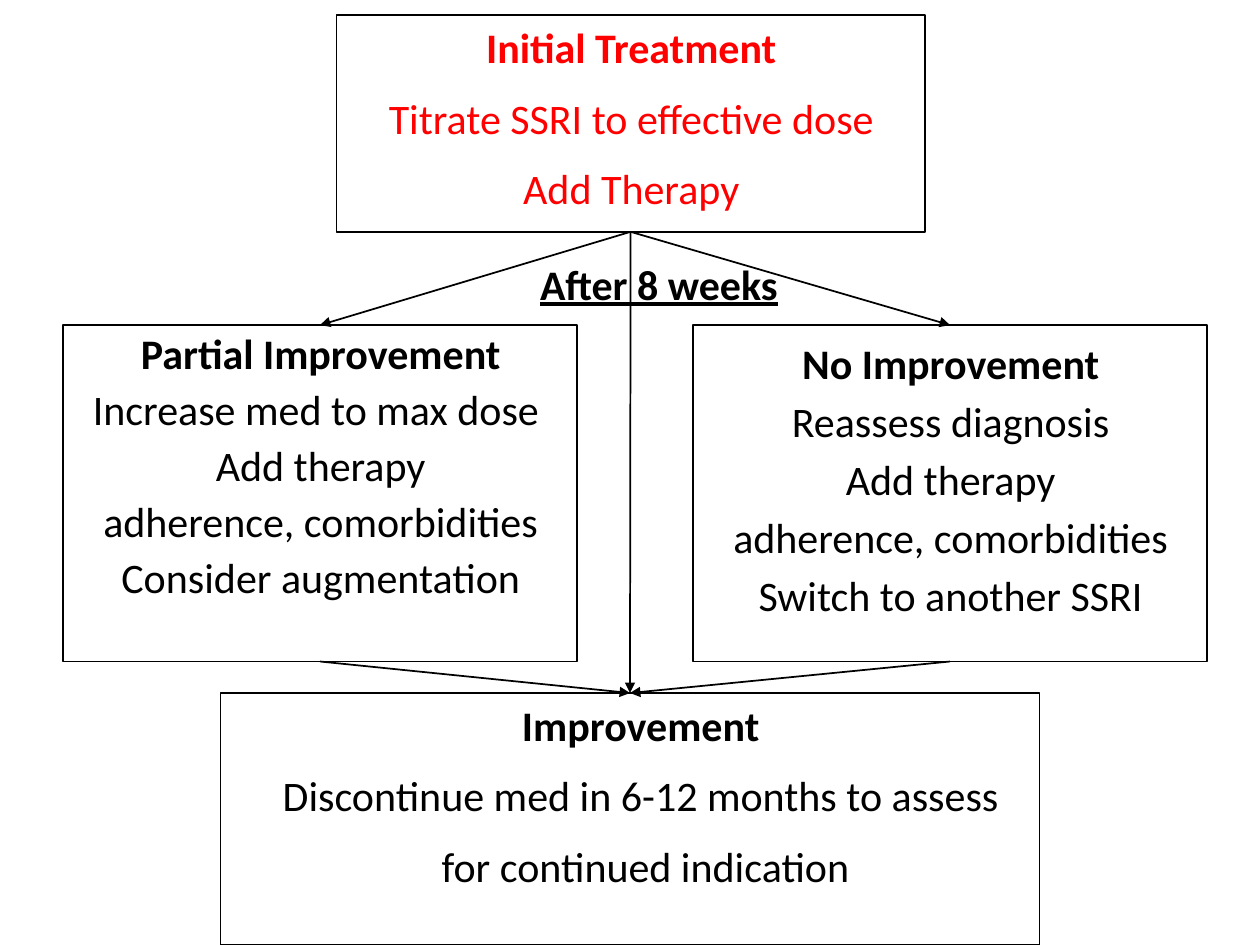
from dataclasses import dataclass
from lxml.etree import SubElement
from pptx import Presentation
from pptx.dml.color import RGBColor
from pptx.enum.shapes import MSO_CONNECTOR as Connector, MSO_SHAPE as Shape
from pptx.enum.text import MSO_ANCHOR as Anchor, PP_ALIGN as Align
from pptx.oxml.ns import qn
from pptx.util import Inches, Pt

TOP, BOTTOM = 0, 2


@dataclass(frozen=True)
class Theme:
    """Colours, type sizes and spacings of the slide."""
    ink: RGBColor = RGBColor(0, 0, 0)
    accent: RGBColor = RGBColor(255, 0, 0)
    font: str = "Calibri"
    size: Pt = Pt(24)
    line: Pt = Pt(1)
    wide_gap: Pt = Pt(11.6)
    medium_gap: Pt = Pt(4.3)
    narrow_gap: Pt = Pt(3.2)


THEME = Theme()


def add_text(slide, area, lines, gap=THEME.wide_gap, color=THEME.ink,
             top_inset=0.05, underline=False):
    """Place a bold heading and its plain lines, centred in the area."""
    frame = slide.shapes.add_textbox(*map(Inches, area)).text_frame
    frame.word_wrap = True
    frame.vertical_anchor = Anchor.TOP
    frame.margin_top = Inches(top_inset)
    for index, line in enumerate(lines):
        paragraph = frame.paragraphs[0] if index == 0 else frame.add_paragraph()
        paragraph.alignment = Align.CENTER
        paragraph.space_before = gap if index else Pt(0)
        run = paragraph.add_run()
        run.text = line
        style = {"name": THEME.font, "size": THEME.size,
                 "bold": index == 0, "underline": underline}
        for key, value in style.items():
            setattr(run.font, key, value)
        run.font.color.rgb = color


def add_step(slide, box):
    """Place the outlined box of one step and return it."""
    step = slide.shapes.add_shape(Shape.FLOWCHART_PROCESS, *map(Inches, box))
    step.shadow.inherit = False
    step.fill.background()
    step.line.color.rgb = THEME.ink
    step.line.width = THEME.line
    return step


def add_arrow(slide, source, target):
    """Join the bottom of one step to the top of the next with an arrow."""
    arrow = slide.shapes.add_connector(Connector.STRAIGHT, 0, 0, 0, 0)
    arrow.begin_connect(source, BOTTOM)
    arrow.end_connect(target, TOP)
    arrow.line.color.rgb = THEME.ink
    arrow.line.width = THEME.line
    SubElement(arrow.line._get_or_add_ln(), qn("a:tailEnd"), type="triangle")
    SubElement(arrow._element.spPr, qn("a:effectLst"))


def add_flowchart(slide):
    """Place the four steps, their wording and the arrows between them."""
    initial, partial, unimproved, improved = (
        add_step(slide, box) for box in (
            (2.67, 0.12, 4.67, 1.72), (0.5, 2.58, 4.08, 2.67),
            (5.5, 2.58, 4.08, 2.67), (1.75, 5.5, 6.5, 2)))
    add_text(slide, (2, 0.12, 6.02, 1.72),
             ["Initial Treatment", "Titrate SSRI to effective dose", "Add Therapy"],
             color=THEME.accent)
    add_text(slide, (0.42, 2.5, 4.25, 2.41),
             ["Partial Improvement", "Increase med to max dose ", "Add therapy",
              "adherence, comorbidities", "Consider augmentation"],
             gap=THEME.narrow_gap, top_inset=0.1)
    add_text(slide, (5.42, 2.58, 4.25, 2.9),
             ["No Improvement", "Reassess diagnosis", "Add therapy",
              "adherence, comorbidities", "Switch to another SSRI"],
             gap=THEME.medium_gap, top_inset=0.1)
    add_text(slide, (0.5, 5.5, 9.17, 1.72),
             ["Improvement", "Discontinue med in 6-12 months to assess",
              " for continued indication"])
    for source, target in ((initial, improved), (initial, partial),
                           (initial, unimproved), (unimproved, improved),
                           (partial, improved)):
        add_arrow(slide, source, target)
    add_text(slide, (3.98, 2, 2.5, 0.5), ["After 8 weeks"], underline=True)


def main():
    """Build the treatment flowchart slide and save it."""
    deck = Presentation()
    deck.slide_width, deck.slide_height = Inches(10), Inches(7.5)
    add_flowchart(deck.slides.add_slide(deck.slide_layouts[6]))
    deck.save("out.pptx")


if __name__ == "__main__":
    main()
